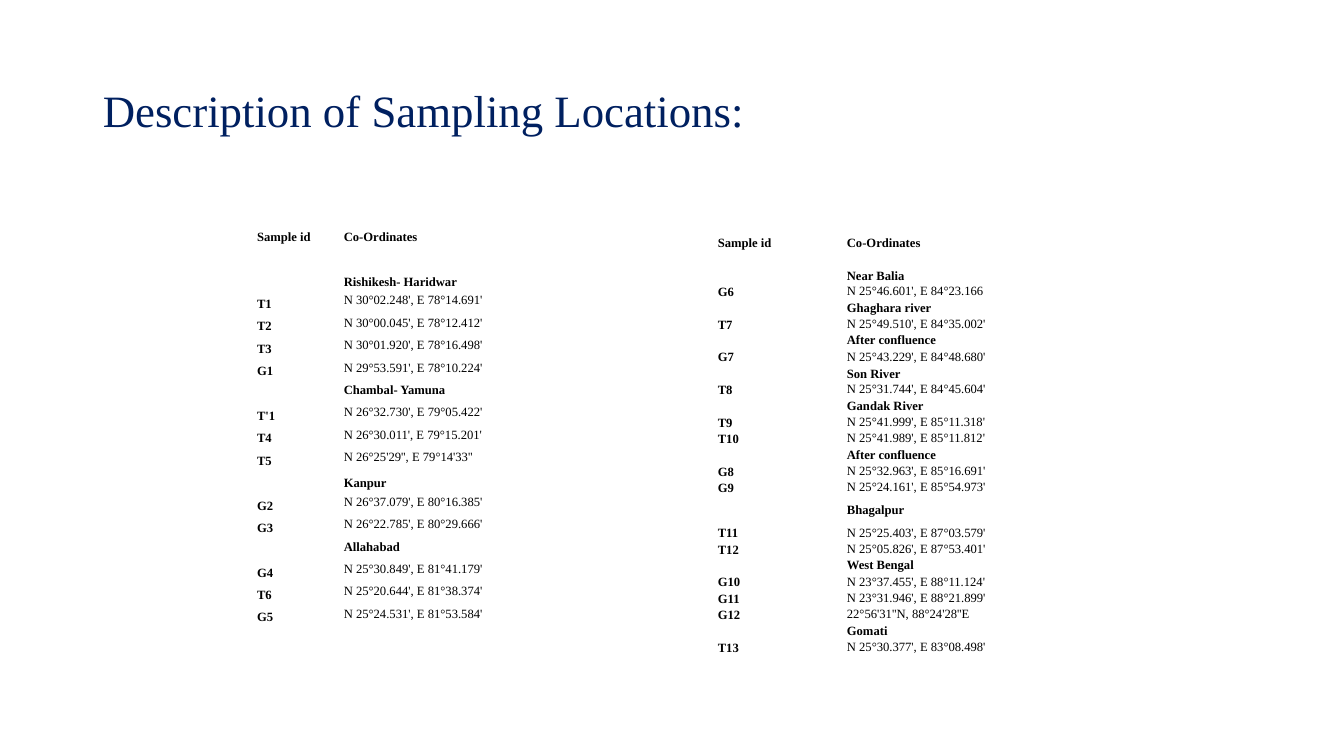
from pptx import Presentation
from pptx.dml.color import RGBColor
from pptx.enum.text import MSO_ANCHOR, PP_ALIGN
from pptx.util import Inches, Pt

LEFT = PP_ALIGN.LEFT
MID = MSO_ANCHOR.MIDDLE
LOW = MSO_ANCHOR.BOTTOM
FONT = "Times New Roman"


def write(frame, text, size=9, color="000000", bold=False, anchor=MID):
    frame.vertical_anchor = anchor
    para = frame.paragraphs[0]
    para.alignment = LEFT
    run = para.add_run()
    run.text = text
    run.font.name = FONT
    run.font.size = Pt(size)
    run.font.bold = bold
    run.font.color.rgb = RGBColor.from_string(color)


HEAD = ("Sample id", "Co-Ordinates")
UPPER = [
    HEAD,
    ("", ""),
    ("", "Rishikesh- Haridwar"),
    ("T1", "N 30°02.248', E 78°14.691'"),
    ("T2", "N 30°00.045', E 78°12.412'"),
    ("T3", "N 30°01.920', E 78°16.498'"),
    ("G1", "N 29°53.591', E 78°10.224'"),
    ("", "Chambal- Yamuna"),
    ("T'1", "N 26°32.730', E 79°05.422'"),
    ("T4", "N 26°30.011', E 79°15.201'"),
    ("T5", "N 26°25'29'', E 79°14'33''"),
    ("", "Kanpur"),
    ("G2", "N 26°37.079', E 80°16.385'"),
    ("G3", "N 26°22.785', E 80°29.666'"),
    ("", "Allahabad"),
    ("G4", "N 25°30.849', E 81°41.179'"),
    ("T6", "N 25°20.644', E 81°38.374'"),
    ("G5", "N 25°24.531', E 81°53.584'"),
]
LOWER = [
    HEAD,
    ("", ""),
    ("", "Near Balia"),
    ("G6", "N 25°46.601', E 84°23.166"),
    ("", "Ghaghara river"),
    ("T7", "N 25°49.510', E 84°35.002'"),
    ("", "After confluence"),
    ("G7", "N 25°43.229', E 84°48.680'"),
    ("", "Son River"),
    ("T8", "N 25°31.744', E 84°45.604'"),
    ("", "Gandak River"),
    ("T9", "N 25°41.999', E 85°11.318'"),
    ("T10", "N 25°41.989', E 85°11.812'"),
    ("", "After confluence"),
    ("G8", "N 25°32.963', E 85°16.691'"),
    ("G9", "N 25°24.161', E 85°54.973'"),
    ("", "Bhagalpur"),
    ("T11", "N 25°25.403', E 87°03.579'"),
    ("T12", "N 25°05.826', E 87°53.401'"),
    ("", "West Bengal"),
    ("G10", "N 23°37.455', E 88°11.124'"),
    ("G11", "N 23°31.946', E 88°21.899'"),
    ("G12", "22°56'31''N, 88°24'28''E"),
    ("", "Gomati"),
    ("T13", "N 25°30.377', E 83°08.498'"),
]
TABLES = [
    (UPPER, 2.54, 2.2, 4, (0.86, 0.65, 0.65, 0.81), {}),
    (LOWER, 7.11, 2.32, 4.18, (1.28, 1, 1.01, 1.26), {"Bhagalpur": 0.29}),
]
BASE = {"Co-Ordinates", "Rishikesh- Haridwar", "Kanpur", "Near Balia", "Son River"}
SINGLE = {"Kanpur", "Son River", "Gomati"}

deck = Presentation()
deck.slide_width = Inches(13.33)
deck.slide_height = Inches(7.5)
slide = deck.slides.add_slide(deck.slide_layouts[5])

title = slide.shapes.title
title.left, title.top = Inches(0.92), Inches(0.4)
title.width, title.height = Inches(11.5), Inches(1.45)
write(title.text_frame, "Description of Sampling Locations:", size=32, color="002060")
title.text_frame.paragraphs[0].line_spacing = 0.9

for sites, left, top, height, widths, tall in TABLES:
    frame = slide.shapes.add_table(
        len(sites), len(widths), Inches(left), Inches(top),
        Inches(sum(widths)), Inches(height))
    table = frame.table
    table.first_row = False
    table.horz_banding = False
    for col, width in zip(table.columns, widths):
        col.width = Inches(width)
    for cell in table.iter_cells():
        cell.fill.background()
        cell.margin_left = cell.margin_right = cell.margin_top = Inches(0.01)
        cell.margin_bottom = 0
        cell.text_frame.paragraphs[0]._p.get_or_add_endParaRPr().set("sz", "900")

    step = (height - sum(tall.values())) / (len(sites) - len(tall))
    for row, (code, place) in enumerate(sites):
        table.rows[row].height = Inches(tall.get(place, step))
        site = code and code != "Sample id"
        last = 3 if site else 2
        if place and place not in SINGLE:
            table.cell(row, 1).merge(table.cell(row, last))
        if code:
            cell = table.cell(row, 0)
            write(cell.text_frame, code, bold=True)
            cell.vertical_anchor = LOW
        if place:
            cell = table.cell(row, 1)
            write(cell.text_frame, place, bold=not site)
            cell.vertical_anchor = LOW if place in BASE else MID

deck.save("out.pptx")
